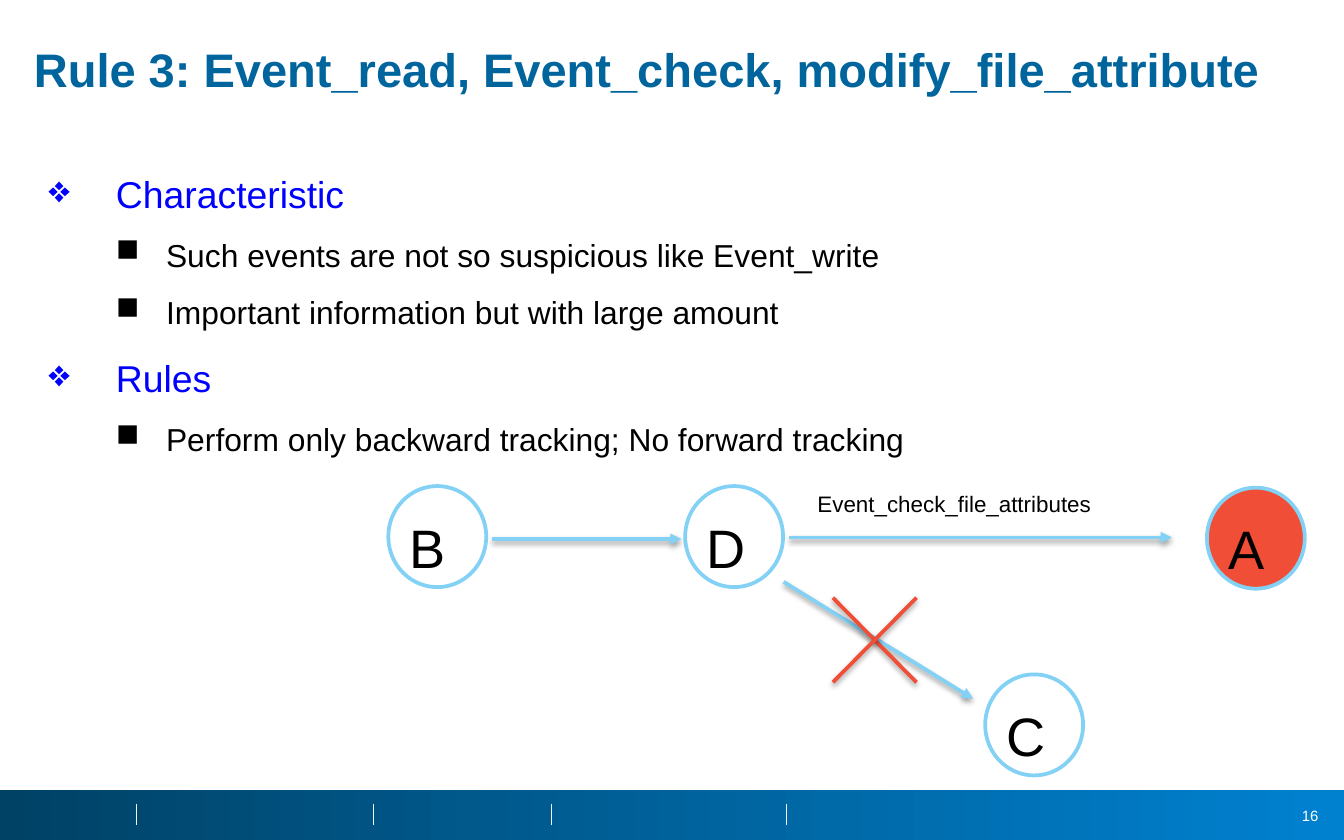
from lxml.etree import SubElement
from pptx import Presentation
from pptx.dml.color import RGBColor
from pptx.enum.shapes import MSO_CONNECTOR as Link, MSO_SHAPE as Shape
from pptx.enum.text import MSO_ANCHOR as Anchor, MSO_AUTO_SIZE as Fit, PP_ALIGN as Align
from pptx.oxml.ns import qn
from pptx.util import Cm, Pt

INSET = 0.13
SKY, RED, BLUE, BLACK, WHITE = "83D1F5", "F04E37", "0000FF", "000000", "FFFFFF"


def rgb(code):
    """Turn a hex string into a colour."""
    return RGBColor.from_string(code)


def style(paragraph, size, color, bold=False):
    """Format all runs of a paragraph."""
    for run in paragraph.runs:
        run.font.name = "Arial"
        run.font.size = Pt(size)
        run.font.bold = bold
        run.font.color.rgb = rgb(color)


def set_frame(frame, inset=INSET, anchor=Anchor.TOP):
    """Give a text frame its margins, anchor and wrapping."""
    frame.margin_left = frame.margin_right = Cm(inset)
    frame.margin_top = frame.margin_bottom = Cm(inset)
    frame.vertical_anchor = anchor
    frame.word_wrap = True
    frame.auto_size = Fit.NONE


def add_text(slide, box, text, size, color, **frame_options):
    """Add a one-line text box and return its paragraph."""
    frame = slide.shapes.add_textbox(*map(Cm, box)).text_frame
    set_frame(frame, **frame_options)
    frame.text = text
    style(frame.paragraphs[0], size, color)
    return frame.paragraphs[0]


def add_line(slide, start, end, color, width, arrow=False, shadow=False):
    """Draw a straight line, optionally with an arrowhead and a soft shadow."""
    line = slide.shapes.add_connector(Link.STRAIGHT, *map(Cm, start + end))
    line.line.color.rgb = rgb(color)
    line.line.width = Pt(width)
    if arrow:
        SubElement(line.line._get_or_add_ln(), qn("a:tailEnd"), type="triangle")
    effects = SubElement(line._element.spPr, qn("a:effectLst"))
    if shadow:
        soft = SubElement(effects, qn("a:outerShdw"), blurRad=str(Pt(3)), dist=str(Pt(1.6)),
                          dir="5400000", rotWithShape="0")
        tone = SubElement(soft, qn("a:srgbClr"), val=BLACK)
        SubElement(tone, qn("a:alpha"), val="38000")


def add_footer(slide, box):
    """Draw the gradient bar with its dividers and slide number."""
    left, top, width, height = box
    bar = slide.shapes.add_shape(Shape.RECTANGLE, *map(Cm, box))
    bar.shadow.inherit = False
    bar.line.fill.background()
    bar.fill.gradient()
    bar.fill.gradient_angle = 0
    for stop, color in zip(bar.fill.gradient_stops, ("004266", "0081D0")):
        stop.color.rgb = rgb(color)
    number = add_text(slide, (left + width - 1.3, top + 0.18, 1.07, 0.61), "16", 8, WHITE,
                      inset=0.25, anchor=Anchor.MIDDLE)
    number.alignment = Align.RIGHT
    for offset in (2.57, 7.06, 10.41, 14.86):
        x = left + offset
        add_line(slide, (x, top + 0.26), (x, top + 0.67), "F2F2F2", 0.25)


def add_title(slide, box, text):
    """Place and format the title placeholder."""
    title = slide.shapes.title
    title.left, title.top, title.width, title.height = map(Cm, box)
    set_frame(title.text_frame)
    title.text_frame.text = text
    heading = title.text_frame.paragraphs[0]
    heading.alignment = Align.LEFT
    heading.line_spacing = 0.9
    style(heading, 25.2, "00649D", bold=True)


def add_bullet(paragraph, mark, indent, hanging, color):
    """Give a paragraph a bullet and a hanging indent."""
    properties = paragraph._p.get_or_add_pPr()
    properties.set("marL", str(Cm(indent)))
    properties.set("indent", str(-Cm(hanging)))
    tint = SubElement(properties, qn("a:buClr"))
    SubElement(tint, qn("a:srgbClr"), val=color)
    SubElement(properties, qn("a:buChar"), char=mark)


def add_section(slide, box, heading, points):
    """Write a heading with its bulleted points."""
    frame = slide.shapes.add_textbox(*map(Cm, box)).text_frame
    set_frame(frame)
    frame.text = "\n".join([heading, *points])
    for index, paragraph in enumerate(frame.paragraphs):
        paragraph.line_spacing = 1.5
        if index == 0:
            add_bullet(paragraph, "❖", 1.27, 1.27, BLUE)
            style(paragraph, 20, BLUE)
        else:
            paragraph.level = 1
            add_bullet(paragraph, "■", 2.22, 0.95, BLACK)
            style(paragraph, 17, BLACK)


def add_node(slide, box, name, color):
    """Draw one lettered circle of the graph."""
    node = slide.shapes.add_shape(Shape.OVAL, *map(Cm, box))
    node.shadow.inherit = False
    node.fill.solid()
    node.fill.fore_color.rgb = rgb(color)
    node.line.color.rgb = rgb(SKY)
    node.line.width = Pt(2)
    set_frame(node.text_frame)
    node.text_frame.margin_top = Cm(0.25)
    node.text_frame.margin_bottom = 0
    node.text_frame.text = name
    letter = node.text_frame.paragraphs[0]
    letter.alignment = Align.LEFT
    style(letter, 29, BLACK)


def add_graph(slide, box):
    """Draw the event graph with its crossed-out forward edge."""
    left, top = box[:2]

    def at(x, y):
        """Shift a point into the graph's box."""
        return left + x, top + y

    nodes = (("B", 0, 0, WHITE), ("C", 11.28, 3.56, WHITE),
             ("D", 5.61, 0, WHITE), ("A", 15.47, 0.03, RED))
    for name, x, y, color in nodes:
        add_node(slide, (*at(x, y), 1.85, 1.91), name, color)
    add_text(slide, (*at(7.98, -0.05), 5.72, 0.74), "Event_check_file_attributes", 12, BLACK)
    edges = (((7.57, 0.97), (14.81, 0.97)), ((1.96, 1), (5.54, 1)), ((7.47, 1.81), (11.05, 4.02)))
    for start, end in edges:
        add_line(slide, at(*start), at(*end), SKY, 2, arrow=True, shadow=True)
    for start_x, end_x in ((8.4, 9.98), (9.98, 8.4)):
        add_line(slide, at(start_x, 2.11), at(end_x, 3.71), RED, 2, shadow=True)


def main():
    """Build the slide and save it."""
    deck = Presentation()
    deck.slide_width, deck.slide_height = Cm(25.4), Cm(15.88)
    slide = deck.slides.add_slide(deck.slide_layouts[5])
    add_footer(slide, (0, 14.93, 25.4, 0.95))
    add_title(slide, (0.51, 0.76, 24.36, 1.57),
              "Rule 3: Event_read, Event_check, modify_file_attribute")
    add_section(slide, (0.79, 2.69, 16.6, 3.71), "Characteristic",
                ("Such events are not so suspicious like Event_write",
                 "Important information but with large amount"))
    add_section(slide, (0.79, 6.17, 16.6, 2.64), "Rules",
                ("Perform only backward tracking; No forward tracking",))
    add_graph(slide, (7.34, 9.19, 17.32, 5.47))
    deck.save("out.pptx")


if __name__ == "__main__":
    main()
